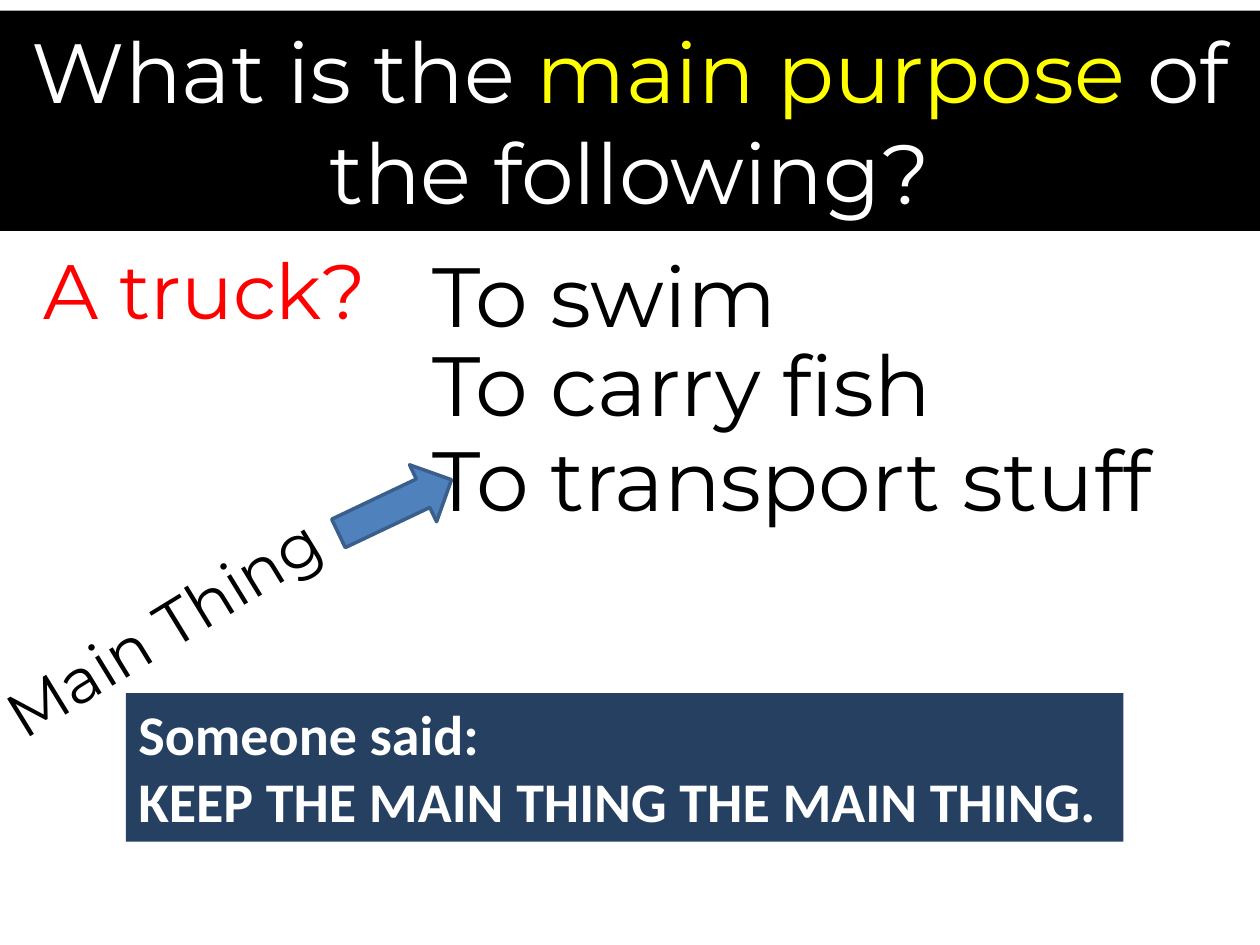
from pptx import Presentation
from pptx.dml.color import RGBColor
from pptx.enum.shapes import MSO_SHAPE
from pptx.enum.text import MSO_ANCHOR, MSO_AUTO_SIZE, PP_ALIGN
from pptx.util import Pt

TITLE = [("What is the ", "FFFFFF"), ("main purpose ", "FFFF00"),
         ("of the following?", "FFFFFF")]
LABELS = [
    ("A truck?", (18, 138, 228, 54), 44, "FF0000", 0),
    ("To swim", (240, 138, 474, 60.5), 48, "000000", 0),
    ("To carry fish", (240, 174, 390, 90), 48, "000000", 0),
    ("To transport stuff", (240, 228, 480, 90), 48, "000000", 0),
    ("Main Thing", (-21, 315.5, 288, 47.5), 36, "000000", 328.4),
]
SAYING = ["Someone said:", "KEEP THE MAIN THING THE MAIN THING."]


def rgb(color):
    return RGBColor.from_string(color)


def box(points):
    return [Pt(v) for v in points]


def fill(sp, color):
    sp.fill.solid()
    sp.fill.fore_color.rgb = rgb(color)


def style(p, name, size, color, align=PP_ALIGN.LEFT, bold=False):
    p.alignment = align
    p.font.name = name
    p.font.size = Pt(size)
    p.font.bold = bold
    p.font.color.rgb = rgb(color)


def frame(sp, anchor=MSO_ANCHOR.MIDDLE):
    tf = sp.text_frame
    tf.word_wrap = True
    tf.auto_size = MSO_AUTO_SIZE.NONE
    tf.vertical_anchor = anchor
    return tf


def add_title(s):
    sp = s.shapes.title
    sp.left, sp.top, sp.width, sp.height = box((0, 6, 720, 126))
    fill(sp, "000000")
    p = frame(sp).paragraphs[0]
    style(p, "Montserrat", 48, "FFFFFF", PP_ALIGN.CENTER)
    for text, color in TITLE:
        r = p.add_run()
        r.text = text
        r.font.color.rgb = rgb(color)


def add_label(s, text, place, size, color, rotation):
    sp = s.shapes.add_textbox(*box(place))
    sp.rotation = rotation
    p = frame(sp).paragraphs[0]
    p.text = text
    style(p, "Montserrat", size, color)


def add_arrow(s):
    sp = s.shapes.add_shape(MSO_SHAPE.RIGHT_ARROW, *box((190, 271.5, 71.5, 36)))
    sp.rotation = 334.6
    sp.shadow.inherit = False
    fill(sp, "4F81BD")
    sp.line.color.rgb = rgb("3A5F8C")
    sp.line.width = Pt(2)


def add_saying(s):
    sp = s.shapes.add_textbox(*box((72, 396, 570, 85)))
    fill(sp, "254061")
    tf = frame(sp, MSO_ANCHOR.TOP)
    tf.auto_size = MSO_AUTO_SIZE.SHAPE_TO_FIT_TEXT
    tf.text = "\n".join(SAYING)
    for p in tf.paragraphs:
        style(p, "Calibri", 32, "FFFFFF", bold=True)


def main():
    prs = Presentation()
    prs.slide_width, prs.slide_height = Pt(720), Pt(540)
    s = prs.slides.add_slide(prs.slide_layouts[5])
    add_title(s)
    for label in LABELS:
        add_label(s, *label)
    add_arrow(s)
    add_saying(s)
    prs.save("out.pptx")


if __name__ == "__main__":
    main()
